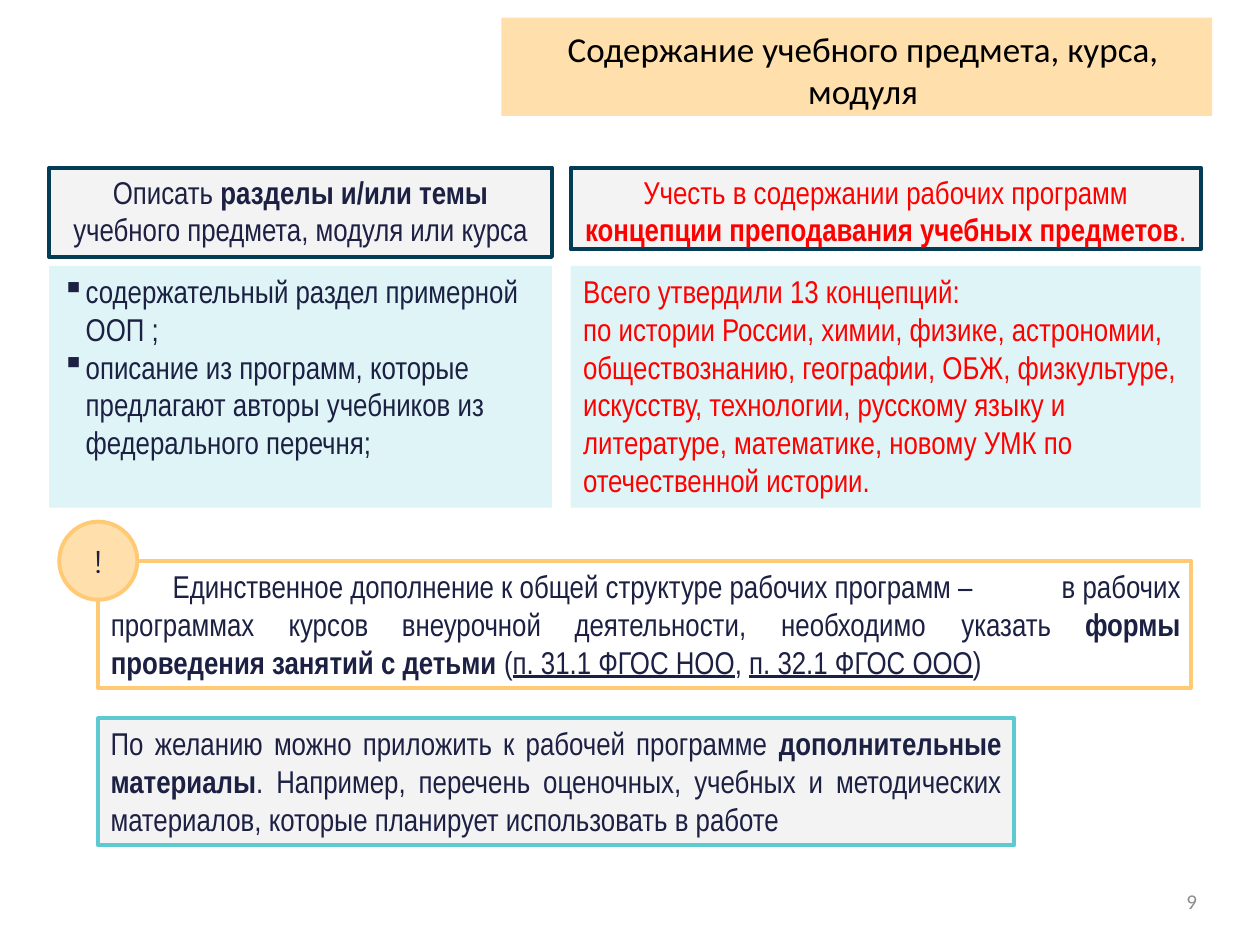
from dataclasses import dataclass
from typing import NamedTuple, Optional

from lxml.etree import SubElement
from pptx import Presentation
from pptx.dml.color import RGBColor
from pptx.enum.shapes import MSO_SHAPE as Preset
from pptx.enum.text import MSO_ANCHOR as Anchor, MSO_AUTO_SIZE as AutoSize, PP_ALIGN as Align
from pptx.oxml.ns import qn
from pptx.util import Inches, Pt

BLACK = RGBColor(0x00, 0x00, 0x00)
INK = RGBColor(0x1C, 0x20, 0x43)
RED = RGBColor(0xFF, 0x00, 0x00)
GRAY = RGBColor(0x8C, 0x8C, 0x8C)
NAVY = RGBColor(0x04, 0x3C, 0x56)
PALE = RGBColor(0xF3, 0xF3, 0xF3)
ICE = RGBColor(0xDF, 0xF4, 0xF6)
PEACH = RGBColor(0xFF, 0xDF, 0xAB)
AMBER = RGBColor(0xFF, 0xCA, 0x73)
TEAL = RGBColor(0x5D, 0xC9, 0xD1)


class Span(NamedTuple):
    text: str
    bold: bool = False
    underline: bool = False


@dataclass
class Para:
    spans: list[Span]
    align: Align = Align.LEFT
    before: float = 0
    bullet: str = ""
    tabs: tuple[float, ...] = ()


@dataclass
class Style:
    font: str = "Arial Narrow"
    size: float = 18
    color: RGBColor = INK
    anchor: Anchor = Anchor.TOP
    top: float = 0.01
    left: float = 0
    right: float = 0


@dataclass
class Panel:
    at: tuple[float, float, float, float]
    paras: list[Para]
    style: Style
    fill: Optional[RGBColor] = None
    line: Optional[RGBColor] = None
    preset: Optional[Preset] = Preset.RECTANGLE


def format_para(para, content: Para, style: Style) -> None:
    para.alignment = content.align
    para.space_before = Pt(content.before)
    properties = para._p.get_or_add_pPr()
    if content.bullet:
        properties.set("marL", str(Inches(0.29)))
        properties.set("indent", str(Inches(-0.19)))
        SubElement(properties, qn("a:buChar"), char=content.bullet)
    if content.tabs:
        stops = SubElement(properties, qn("a:tabLst"))
        for stop in content.tabs:
            SubElement(stops, qn("a:tab"), pos=str(Inches(stop)), algn="l")
    for span in content.spans:
        run = para.add_run()
        run.text = span.text
        run.font.name = style.font
        run.font.size = Pt(style.size)
        run.font.color.rgb = style.color
        run.font.bold = span.bold
        run.font.underline = span.underline


def write(box, paras: list[Para], style: Style) -> None:
    frame = box.text_frame
    frame.word_wrap = True
    frame.auto_size = AutoSize.NONE
    frame.vertical_anchor = style.anchor
    frame.margin_left = Inches(style.left)
    frame.margin_right = Inches(style.right)
    frame.margin_top = Inches(style.top)
    frame.margin_bottom = 0
    for index, content in enumerate(paras):
        para = frame.add_paragraph() if index else frame.paragraphs[0]
        format_para(para, content, style)


def draw(page, panel: Panel) -> None:
    place = [Inches(value) for value in panel.at]
    if panel.preset is None:
        box = page.shapes.add_textbox(*place)
    else:
        box = page.shapes.add_shape(panel.preset, *place)
        box.shadow.inherit = False
        if panel.fill is None:
            box.fill.background()
        else:
            box.fill.solid()
            box.fill.fore_color.rgb = panel.fill
        if panel.line is None:
            box.line.fill.background()
        else:
            box.line.color.rgb = panel.line
            box.line.width = Pt(2.25)
    write(box, panel.paras, panel.style)


def draw_title(page) -> None:
    title = page.shapes.title
    title.left, title.top, title.width, title.height = map(Inches, (3.98, 0.14, 5.64, 0.78))
    title.fill.solid()
    title.fill.fore_color.rgb = PEACH
    style = Style("Calibri", 20, BLACK, Anchor.MIDDLE, top=0.04, left=0.1)
    write(title, [Para([Span("Содержание учебного предмета, курса, модуля")], Align.CENTER, 3.2)], style)


LEFT, LEFT_WIDTH = 0.39, 3.99
RIGHT, RIGHT_WIDTH = 4.53, 5
BODY_TOP, BODY_HEIGHT = 2.11, 1.92
NOTE_LEFT, NOTE_HEIGHT = 0.78, 1.01
NOTE_TOP = 4.45
BADGE = 0.62
PLAIN = Style()

PANELS = [
    Panel((LEFT, 1.33, LEFT_WIDTH, 0.71), [
        Para([Span("Описать "), Span("разделы и/или темы", True)], Align.CENTER, 3.1),
        Para([Span("учебного предмета, модуля или курса")], Align.CENTER),
    ], Style(top=0.04), PALE, NAVY),
    Panel((LEFT, BODY_TOP, LEFT_WIDTH, BODY_HEIGHT), [
        Para([Span("содержательный раздел примерной ООП ;")], before=3.2, bullet="▪"),
        Para([Span("описание из программ, которые предлагают авторы учебников из "
                   "федерального перечня;")], bullet="▪"),
    ], Style(top=0.05), ICE),
    Panel((RIGHT, 1.33, RIGHT_WIDTH, 0.65), [
        Para([Span("Учесть в содержании рабочих программ")], Align.CENTER, 3.1),
        Para([Span("концепции преподавания учебных предметов", True), Span(".")], Align.CENTER),
    ], Style(color=RED, top=0.04), PALE, NAVY),
    Panel((RIGHT, BODY_TOP, RIGHT_WIDTH, BODY_HEIGHT), [
        Para([Span("Всего утвердили 13 концепций:")], before=3.2),
        Para([Span("по истории России, химии, физике, астрономии, обществознанию, "
                   "географии, ОБЖ, физкультуре, искусству, технологии, русскому языку и "
                   "литературе, математике, новому УМК по отечественной истории.")]),
    ], Style(color=RED, top=0.05, left=0.1), ICE),
    Panel((NOTE_LEFT, NOTE_TOP, 8.67, NOTE_HEIGHT), [], PLAIN, line=AMBER),
    Panel((1.36, 4.49, 6.78, 0.33), [
        Para([Span("Единственное дополнение к общей структуре рабочих программ –")], before=1),
    ], Style(left=0.01), preset=None),
    Panel((8.33, 4.49, 1.04, 0.63), [
        Para([Span("в рабочих")], Align.RIGHT, 1),
        Para([Span("формы", True)], Align.RIGHT),
    ], PLAIN, preset=None),
    Panel((0.87, 4.79, 7.48, 0.63), [
        Para([Span("программах\tкурсов\tвнеурочной\tдеятельности,\tнеобходимо\tуказать")],
             before=1, tabs=(1.41, 2.31, 3.68, 5.32, 6.75)),
        Para([Span("проведения занятий с детьми ", True), Span("("),
              Span("п. 31.1 ФГОС НОО", underline=True), Span(", "),
              Span("п. 32.1 ФГОС ООО", underline=True), Span(")")]),
    ], Style(left=0.01), preset=None),
    Panel((NOTE_LEFT - BADGE / 2, NOTE_TOP - BADGE / 2, BADGE, BADGE), [
        Para([Span("!")], Align.CENTER),
    ], Style("Montserrat", anchor=Anchor.MIDDLE, top=0), PEACH, AMBER, Preset.OVAL),
    Panel((NOTE_LEFT, 5.7, 7.27, NOTE_HEIGHT), [
        Para([Span("По желанию можно приложить к рабочей программе "),
              Span("дополнительные материалы", True),
              Span(". Например, перечень оценочных, учебных и методических материалов, "
                   "которые планирует использовать в работе")], Align.JUSTIFY, 3.2),
    ], Style(top=0.05, left=0.1, right=0.1), PALE, TEAL),
    Panel((7.17, 6.95, 2.33, 0.4), [Para([Span("9")], Align.RIGHT)],
          Style("Calibri", 12, GRAY, Anchor.MIDDLE, top=0), preset=None),
]


def main() -> None:
    deck = Presentation()
    deck.slide_width, deck.slide_height = Inches(10), Inches(7.5)
    page = deck.slides.add_slide(deck.slide_layouts[5])
    draw_title(page)
    for panel in PANELS:
        draw(page, panel)
    deck.save("out.pptx")


if __name__ == "__main__":
    main()
